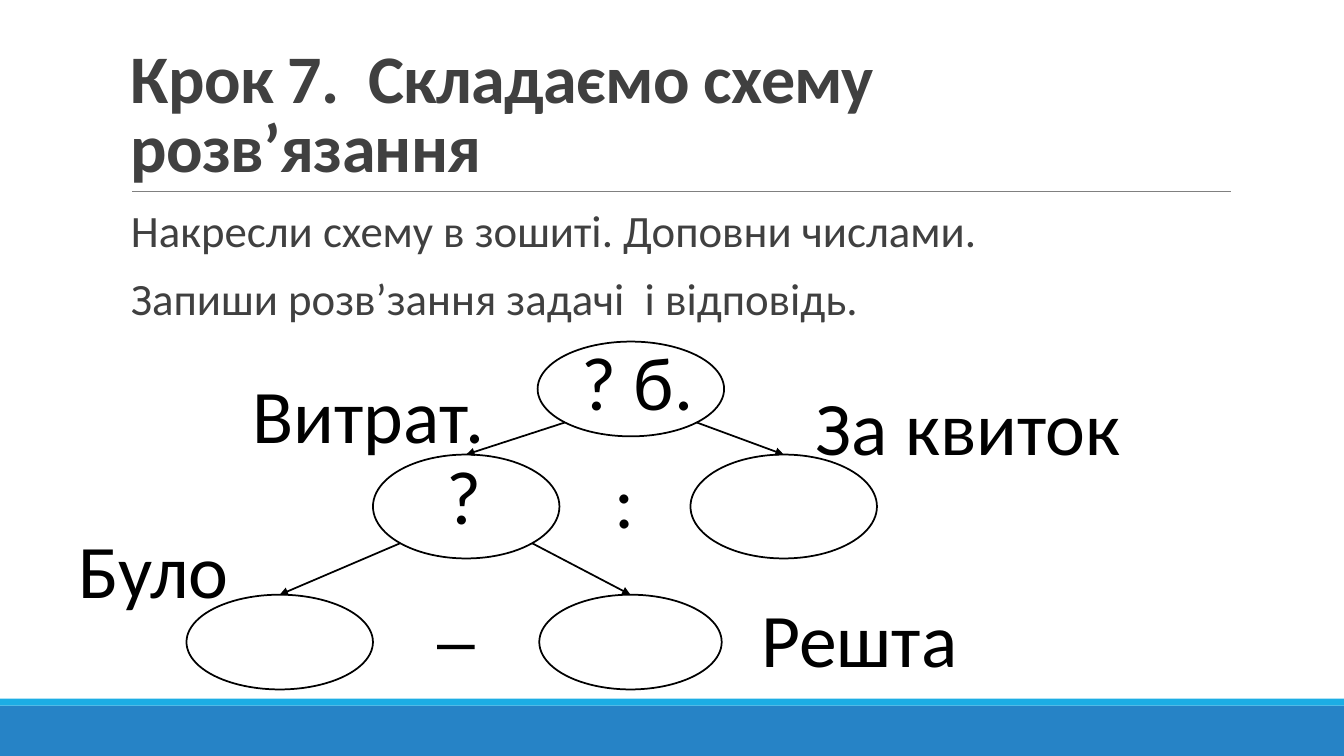
import math
import pptx
import pptx.dml.color
import pptx.enum.shapes
import pptx.enum.text
import pptx.oxml
import pptx.oxml.ns
import pptx.util

Pt = pptx.util.Pt
SHAPES = pptx.enum.shapes.MSO_SHAPE
ANCHOR = pptx.enum.text.MSO_ANCHOR
ALIGN = pptx.enum.text.PP_ALIGN
AUTO_SIZE = pptx.enum.text.MSO_AUTO_SIZE
SLIDE_WIDTH, SLIDE_HEIGHT = 960, 540
COLORS = {"band": "2683C6", "stripe": "1CADE4", "rule": "808080",
          "text": "404040", "ink": "000000", "paper": "FFFFFF"}

NODES = {"ticket price": (336, 8, 133.2, 67.7), "spent": (218.4, 88.7, 133.2, 74.2),
         "tickets": (445.2, 88.7, 133.2, 74.2), "had": (85.2, 188.8, 133.2, 67.7),
         "left over": (337.2, 188.8, 130.3, 67.7)}
BRANCHES = [("ticket price", "tickets", 1), ("ticket price", "spent", -1),
            ("spent", "left over", 1), ("spent", "had", -1)]
LABELS = [("? б.", 360.2, 0, 94.3), ("Витрат.", 124.1, 23.2, 182.2),
          ("За квиток", 526.6, 31.8, 234), (":", 383.3, 83.7, 29.5),
          ("_", 257.3, 162.9, 41.8), ("?", 263.8, 80.8, 39.6),
          ("Було", 0.2, 134.1, 123.1), ("Решта", 487.7, 183, 156.2)]
LABEL_HEIGHT = 72.7


def rgb(name):
    """Return the palette colour with this name."""
    return pptx.dml.color.RGBColor.from_string(COLORS[name])


def apply(target, values):
    """Set every attribute in values on target."""
    for name, value in values.items():
        setattr(target, name, value)


def add_shape(slide, kind, box, fill, line=None):
    """Draw a filled preset shape with an optional outline."""
    shape = slide.shapes.add_shape(kind, *map(Pt, box))
    shape.shadow.inherit = False
    shape.fill.solid()
    shape.fill.fore_color.rgb = rgb(fill)
    if line:
        shape.line.color.rgb = rgb(line)
        shape.line.width = Pt(1.25)
    else:
        shape.line.fill.background()
    return shape


def add_line(slide, start, end, color, width, arrow=False):
    """Draw a straight line, with an arrowhead at its end if asked."""
    connector = slide.shapes.add_connector(
        pptx.enum.shapes.MSO_CONNECTOR.STRAIGHT, *map(Pt, (*start, *end)))
    connector.line.color.rgb = rgb(color)
    connector.line.width = Pt(width)
    if arrow:
        outline = connector.line._get_or_add_ln()
        head = pptx.oxml.parse_xml(
            f'<a:tailEnd {pptx.oxml.ns.nsdecls("a")} type="triangle"/>')
        outline.append(head)
    connector._element.spPr.append(
        pptx.oxml.parse_xml(f'<a:effectLst {pptx.oxml.ns.nsdecls("a")}/>'))
    return connector


def add_text(slide, box, lines, size, color, frame_format, paragraph_format, bold=False):
    """Add a text box with one paragraph per line."""
    frame = slide.shapes.add_textbox(*map(Pt, box)).text_frame
    apply(frame, frame_format)
    for index, line in enumerate(lines):
        paragraph = frame.add_paragraph() if index else frame.paragraphs[0]
        apply(paragraph, paragraph_format)
        run = paragraph.add_run()
        run.text = line
        apply(run.font, {"name": "Calibri", "size": Pt(size), "bold": bold})
        run.font.color.rgb = rgb(color)
    return frame


def draw_footer(slide, left, top, width, height):
    """Draw the bottom band with its thin stripe on top."""
    stripe = 5
    add_shape(slide, SHAPES.RECTANGLE, (left, top + stripe, width, height - stripe), "band")
    add_shape(slide, SHAPES.RECTANGLE, (left, top, width, stripe), "stripe")


def draw_title(slide, left, top, width, height):
    """Write the heading above its rule."""
    bottom = top + height
    add_line(slide, (left + 8, bottom), (left + width + 1, bottom), "rule", 0.5)
    frame = add_text(slide, (left, top, width, height),
                     ["Крок 7.  Складаємо схему розв’язання"], 48.6, "text",
                     {"word_wrap": True, "vertical_anchor": ANCHOR.BOTTOM},
                     {"line_spacing": 0.85}, bold=True)
    frame.paragraphs[0].runs[0].font._element.set("spc", "-50")


def draw_task(slide, left, top, width, height):
    """Write the two lines of the task."""
    indent = 7.2
    add_text(slide, (left + indent, top, width - indent, height),
             ["Накресли схему в зошиті. Доповни числами.",
              "Запиши розв’зання задачі  і відповідь."], 32, "text",
             {"word_wrap": True, "margin_left": 0, "margin_right": 0},
             {"alignment": ALIGN.JUSTIFY, "line_spacing": 0.9,
              "space_before": Pt(12), "space_after": Pt(2)})


def draw_scheme(slide, left, top):
    """Draw the solution tree with its arrows and labels."""
    ovals = {}
    for name, (x, y, width, height) in NODES.items():
        ovals[name] = add_shape(slide, SHAPES.OVAL, (left + x, top + y, width, height),
                                "paper", "ink")
    for parent, child, side in BRANCHES:
        x, y, width, height = NODES[parent]
        child_x, child_y, child_width, _ = NODES[child]
        start = (left + x + width / 2 * (1 + side * math.sqrt(0.5)),
                 top + y + height / 2 * (1 + math.sqrt(0.5)))
        end = (left + child_x + child_width / 2, top + child_y)
        arrow = add_line(slide, start, end, "ink", 1.25, arrow=True)
        arrow.end_connect(ovals[child], 0)
    for text, x, y, width in LABELS:
        add_text(slide, (left + x, top + y, width, LABEL_HEIGHT), [text], 54, "ink",
                 {"word_wrap": False, "auto_size": AUTO_SIZE.SHAPE_TO_FIT_TEXT},
                 {"alignment": ALIGN.CENTER})


def main():
    """Build the slide and save it."""
    presentation = pptx.Presentation()
    apply(presentation, {"slide_width": Pt(SLIDE_WIDTH), "slide_height": Pt(SLIDE_HEIGHT)})
    slide = presentation.slides.add_slide(presentation.slide_layouts[6])
    draw_footer(slide, 0, 499, SLIDE_WIDTH, 41)
    draw_title(slide, 86.4, 22.3, 792, 114.5)
    draw_task(slide, 86.4, 145.4, 792, 57.6)
    draw_scheme(slide, 48, 236)
    presentation.save("out.pptx")


if __name__ == "__main__":
    main()
